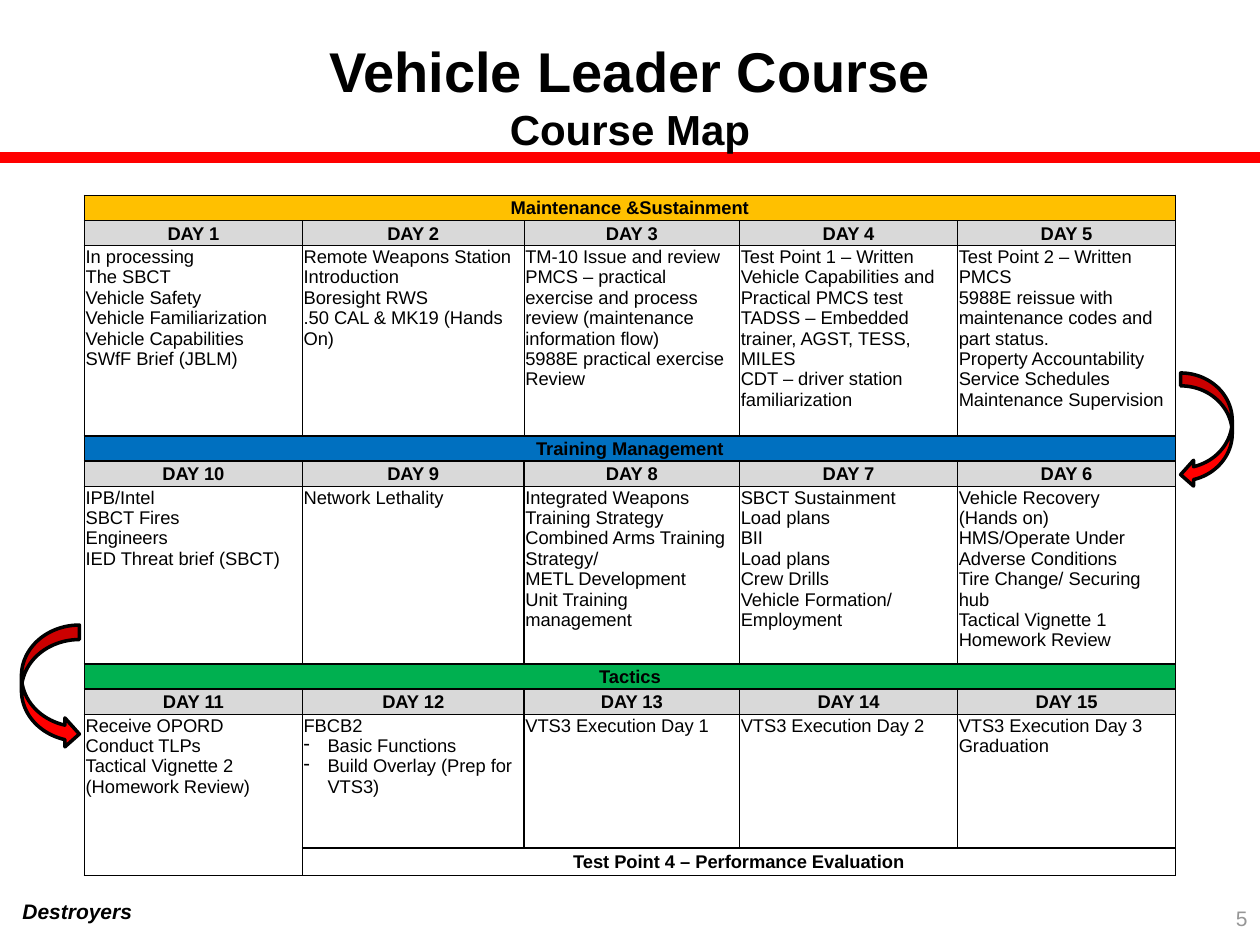
"""Build the course map slide: a three-phase training calendar with turn arrows."""
import pptx
import pptx.util
import pptx.dml.color
import pptx.enum.shapes
import pptx.enum.text
import pptx.oxml.ns
import lxml.etree

RGBColor = pptx.dml.color.RGBColor
Align = pptx.enum.text.PP_ALIGN
Anchor = pptx.enum.text.MSO_ANCHOR
Inches = pptx.util.Inches
Pt = pptx.util.Pt
qn = pptx.oxml.ns.qn

BLACK = RGBColor(0, 0, 0)
RED = RGBColor(0xFF, 0, 0)
GREY = RGBColor(0x96, 0x96, 0x96)
DAY_FILL = RGBColor(0xD9, 0xD9, 0xD9)
GOLD = RGBColor(0xFF, 0xC0, 0)
BLUE = RGBColor(0, 0x70, 0xC0)
GREEN = RGBColor(0, 0xB0, 0x50)

PHASES = [
    ("Maintenance &Sustainment", GOLD, [
        ("DAY 1", ["In processing", "The SBCT", "Vehicle Safety", "Vehicle Familiarization",
                   "Vehicle Capabilities", "SWfF Brief (JBLM)"]),
        ("DAY 2", ["Remote Weapons Station", "Introduction", "Boresight RWS",
                   ".50 CAL & MK19 (Hands On)"]),
        ("DAY 3", ["TM-10 Issue and review",
                   "PMCS – practical exercise and process review (maintenance information flow)",
                   "5988E practical exercise", "Review"]),
        ("DAY 4", ["Test Point 1 – Written Vehicle Capabilities and Practical PMCS test",
                   "TADSS – Embedded trainer, AGST, TESS, MILES",
                   "CDT – driver station familiarization"]),
        ("DAY 5", ["Test Point 2 – Written PMCS",
                   "5988E reissue with maintenance codes and part status.",
                   "Property Accountability", "Service Schedules", "Maintenance Supervision"]),
    ]),
    ("Training Management", BLUE, [
        ("DAY 10", ["IPB/Intel", "SBCT Fires", "Engineers", "IED Threat brief (SBCT)"]),
        ("DAY 9", ["Network Lethality"]),
        ("DAY 8", ["Integrated Weapons Training Strategy", "Combined Arms Training Strategy/",
                   "METL Development", "Unit Training management"]),
        ("DAY 7", ["SBCT Sustainment", "Load plans", "BII", "Load plans", "Crew Drills",
                   "Vehicle Formation/", "Employment"]),
        ("DAY 6", ["Vehicle Recovery", "(Hands on)", "HMS/Operate Under Adverse Conditions",
                   "Tire Change/ Securing hub", "Tactical Vignette 1 Homework Review"]),
    ]),
    ("Tactics", GREEN, [
        ("DAY 11", ["Receive OPORD", "Conduct TLPs", "Tactical Vignette 2", "(Homework Review)"]),
        ("DAY 12", ["FBCB2", "- Basic Functions", "- Build Overlay (Prep for VTS3)"]),
        ("DAY 13", ["VTS3 Execution Day 1"]),
        ("DAY 14", ["VTS3 Execution Day 2"]),
        ("DAY 15", ["VTS3 Execution Day 3", "Graduation"]),
    ]),
]
FINAL_TEST = "Test Point 4 – Performance Evaluation"
COLUMN_WIDTHS = [1.73, 1.76, 1.71, 1.73, 1.73]
BAND_HEIGHT = 0.2
BODY_HEIGHTS = [1.51, 1.41, 1.06]
FINAL_HEIGHT = 0.22
ARROWS = [(9.37, 2.96, 0.41, 0.91, False), (0.17, 4.96, 0.46, 0.98, True)]


def write_text(frame, lines, sizes=(10.5,), color=BLACK, bold=False, italic=False,
               align=Align.LEFT, anchor=Anchor.TOP):
    """Fill a text frame; lines that start with a dash become bullets."""
    frame.vertical_anchor = anchor
    for index, line in enumerate(lines):
        paragraph = frame.paragraphs[0] if index == 0 else frame.add_paragraph()
        paragraph.alignment = align
        if line.startswith("- "):
            line = line[2:]
            properties = paragraph._p.get_or_add_pPr()
            properties.set("marL", str(Inches(0.19)))
            properties.set("indent", str(-Inches(0.19)))
            lxml.etree.SubElement(properties, qn("a:buChar")).set("char", "-")
        run = paragraph.add_run()
        run.text = line
        run.font.name = "Arial"
        run.font.size = Pt(sizes[min(index, len(sizes) - 1)])
        run.font.bold, run.font.italic = bold, italic
        run.font.color.rgb = color


def add_label(slide, box, lines, wrap=True, **text_format):
    """Add a text box."""
    frame = slide.shapes.add_textbox(*map(Inches, box)).text_frame
    frame.word_wrap = wrap
    write_text(frame, lines, **text_format)


def set_borders(cell, widths):
    """Draw the cell's edges; a width of zero hides the edge."""
    properties = cell._tc.get_or_add_tcPr()
    for side, width in zip("LRTB", widths):
        line = lxml.etree.SubElement(properties, qn(f"a:ln{side}"), w=str(Pt(width)))
        if width:
            fill = lxml.etree.SubElement(line, qn("a:solidFill"))
            lxml.etree.SubElement(fill, qn("a:srgbClr"), val=str(BLACK))
        else:
            lxml.etree.SubElement(line, qn("a:noFill"))


def style_grid(table):
    """Give every cell its margins, borders and empty-text size."""
    last_row, last_column = len(table.rows) - 1, len(table.columns) - 1
    for row in range(last_row + 1):
        for column in range(last_column + 1):
            cell = table.cell(row, column)
            cell.margin_left = cell.margin_right = cell.margin_top = Inches(0.01)
            cell.margin_bottom = 0
            inner = 0.5 if row <= 2 else 1
            left = inner if column else 1
            right = inner if column < last_column else 1
            top = 0.5 if row in (1, 2) else 1
            bottom = 0.5 if row in (0, 1) else 1
            if column == 0 and row == last_row:
                top = 0
            if column == 0 and row == last_row - 1:
                bottom = 0
            set_borders(cell, (left, right, top, bottom))
            cell.fill.background()
            ending = lxml.etree.SubElement(cell.text_frame.paragraphs[0]._p, qn("a:endParaRPr"))
            ending.set("sz", "1050")


def write_band(cell, text, color=None):
    """Write a centred bold heading cell."""
    write_text(cell.text_frame, [text], bold=True, align=Align.CENTER)
    cell.vertical_anchor = Anchor.MIDDLE
    if color is not None:
        cell.fill.solid()
        cell.fill.fore_color.rgb = color


def add_course_table(slide):
    """Add the calendar of phases and days."""
    heights = [height for body in BODY_HEIGHTS for height in (BAND_HEIGHT, BAND_HEIGHT, body)]
    heights.append(FINAL_HEIGHT)
    table = slide.shapes.add_table(
        len(heights), len(COLUMN_WIDTHS), Inches(0.67), Inches(1.55),
        Inches(sum(COLUMN_WIDTHS)), Inches(sum(heights))).table
    table.first_row = table.horz_banding = False
    for column, width in zip(table.columns, COLUMN_WIDTHS):
        column.width = Inches(width)
    for row, height in zip(table.rows, heights):
        row.height = Inches(height)
    style_grid(table)
    last_column = len(COLUMN_WIDTHS) - 1
    for phase, (title, color, days) in enumerate(PHASES):
        top = phase * 3
        table.cell(top, 0).merge(table.cell(top, last_column))
        write_band(table.cell(top, 0), title, color)
        for column, (day, topics) in enumerate(days):
            write_band(table.cell(top + 1, column), day, DAY_FILL)
            write_text(table.cell(top + 2, column).text_frame, topics)
    last_row = len(heights) - 1
    table.cell(last_row, 1).merge(table.cell(last_row, last_column))
    write_band(table.cell(last_row, 1), FINAL_TEST)


def add_turn_arrow(slide, left, top, width, height, mirrored):
    """Add a curved arrow leading to the next phase."""
    arrow = slide.shapes.add_shape(pptx.enum.shapes.MSO_SHAPE.CURVED_LEFT_ARROW,
                                   *map(Inches, (left, top, width, height)))
    arrow.shadow.inherit = False
    arrow.fill.solid()
    arrow.fill.fore_color.rgb = RED
    arrow.line.color.rgb = BLACK
    arrow.line.width = Pt(2)
    if mirrored:
        arrow.rotation = 180
        arrow._element.spPr.get_or_add_xfrm().set("flipV", "1")


def main():
    """Build and save the slide."""
    presentation = pptx.Presentation()
    presentation.slide_width, presentation.slide_height = Inches(10), Inches(7.5)
    slide = presentation.slides.add_slide(presentation.slide_layouts[6])
    rule = slide.shapes.add_connector(pptx.enum.shapes.MSO_CONNECTOR.STRAIGHT,
                                      0, Inches(1.25), Inches(10), Inches(1.25))
    rule.line.color.rgb = RED
    rule.line.width = Pt(6)
    lxml.etree.SubElement(rule._element.spPr, qn("a:effectLst"))
    add_label(slide, (0.08, 7.08, 1.08, 0.3), ["Destroyers"], wrap=False,
              sizes=(12,), bold=True, italic=True)
    add_label(slide, (0, 0.24, 10, 1.04), ["Vehicle Leader Course", "Course Map"],
              sizes=(32, 24), bold=True, align=Align.CENTER)
    add_label(slide, (7.67, 7.09, 2.33, 0.4), ["5"], sizes=(12,), color=GREY,
              align=Align.RIGHT, anchor=Anchor.MIDDLE)
    add_course_table(slide)
    for arrow in ARROWS:
        add_turn_arrow(slide, *arrow)
    presentation.save("out.pptx")


if __name__ == "__main__":
    main()
